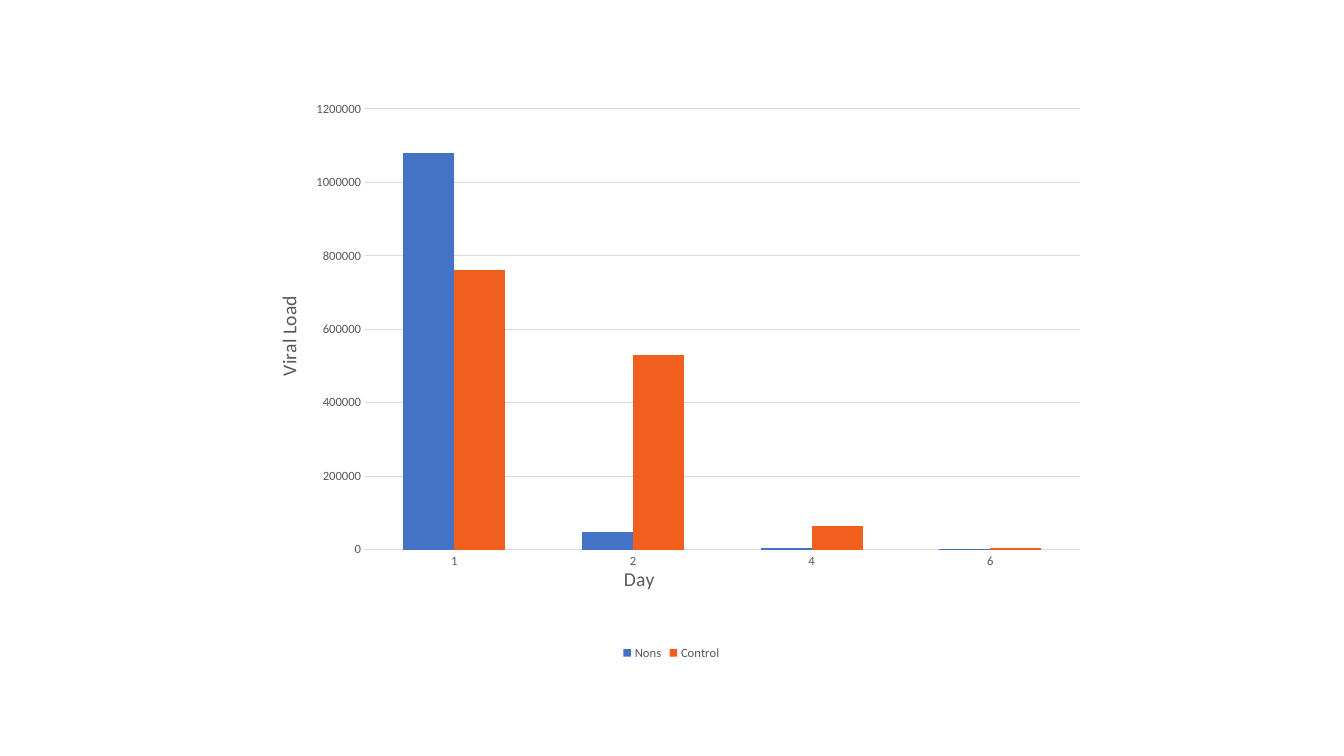
from lxml import etree
from pptx import Presentation
from pptx.chart.data import CategoryChartData
from pptx.dml.color import RGBColor
from pptx.enum.chart import XL_CHART_TYPE, XL_LEGEND_POSITION, XL_TICK_MARK
from pptx.oxml.ns import qn
from pptx.util import Pt

COLUMNS = XL_CHART_TYPE.COLUMN_CLUSTERED
BOTTOM = XL_LEGEND_POSITION.BOTTOM
NO_TICK = XL_TICK_MARK.NONE
COLORS = {"text": "595959", "grid": "D9D9D9", "base": "000000",
          "Nons": "4472C4", "Control": "F05F1E"}
DAYS = ["1", "2", "4", "6"]
VIRAL_LOAD = {"Nons": [1080000, 48000, 4000, 1000],
              "Control": [760000, 530000, 64000, 4000]}


def rgb(name):
    """Return the named colour."""
    return RGBColor.from_string(COLORS[name])


def set_font(font, size=9, color="text"):
    """Format a chart font."""
    font.name, font.size, font.bold = "Calibri", Pt(size), False
    font.color.rgb = rgb(color)


def set_line(line, color="grid"):
    """Draw a thin line in the named colour."""
    line.color.rgb = rgb(color)
    line.width = Pt(0.75)


def place(element, index, **layout):
    """Give a chart part a manual layout in fractions of the chart."""
    for old in element.findall(qn("c:layout")):
        element.remove(old)
    holder = etree.Element(qn("c:layout"))
    manual = etree.SubElement(holder, qn("c:manualLayout"))
    for tag, value in layout.items():
        etree.SubElement(manual, qn("c:" + tag)).set("val", str(value))
    element.insert(index, holder)


def add_axis_title(axis, text, size=14, x=0, y=0):
    """Write an axis title and place its top left corner."""
    title = axis.axis_title
    p = title.text_frame.paragraphs[0]
    r = p.add_run()
    r.text = text
    set_font(r.font, size)
    place(title._element, 1, xMode="edge", yMode="edge", x=x, y=y)


def format_axis(axis):
    """Apply the style shared by both axes."""
    axis.major_tick_mark = axis.minor_tick_mark = NO_TICK
    set_font(axis.tick_labels.font)


def add_load_chart(slide, left, top, width, height):
    """Add the viral load column chart in the given box."""
    data = CategoryChartData()
    data.categories = DAYS
    for name, values in VIRAL_LOAD.items():
        data.add_series(name, values)
    chart = slide.shapes.add_chart(COLUMNS, Pt(left), Pt(top), Pt(width),
                                   Pt(height), data).chart
    chart.has_title = False
    set_font(chart.font, 10, "base")

    plot = chart.plots[0]
    plot.gap_width, plot.overlap = 150, 0
    plot.vary_by_categories = False
    for series in plot.series:
        series.format.fill.solid()
        series.format.fill.fore_color.rgb = rgb(series.name)
        series.invert_if_negative = False
    place(chart._chartSpace.chart.plotArea, 0, layoutTarget="inner",
          xMode="edge", yMode="edge", x=0.14, y=0.03, w=0.84, h=0.77)

    days, loads = chart.category_axis, chart.value_axis
    format_axis(days)
    format_axis(loads)
    set_line(days.format.line)
    loads.format.line.fill.background()
    loads.minimum_scale, loads.maximum_scale = 0, 1200000
    loads.major_unit = 200000
    loads.tick_labels.number_format = "0"
    loads.tick_labels.number_format_is_linked = False
    set_line(loads.major_gridlines.format.line)
    add_axis_title(days, "Day", x=0.44, y=0.82)
    add_axis_title(loads, "Viral Load", x=0.03, y=0.35)

    chart.has_legend = True
    chart.legend.position = BOTTOM
    chart.legend.include_in_layout = False
    set_font(chart.legend.font)


def main():
    """Build the slide and save it."""
    prs = Presentation()
    prs.slide_width, prs.slide_height = Pt(960), Pt(540)
    slide = prs.slides.add_slide(prs.slide_layouts[6])
    add_load_chart(slide, 175.7, 65.5, 607.7, 409)
    prs.save("out.pptx")


if __name__ == "__main__":
    main()
